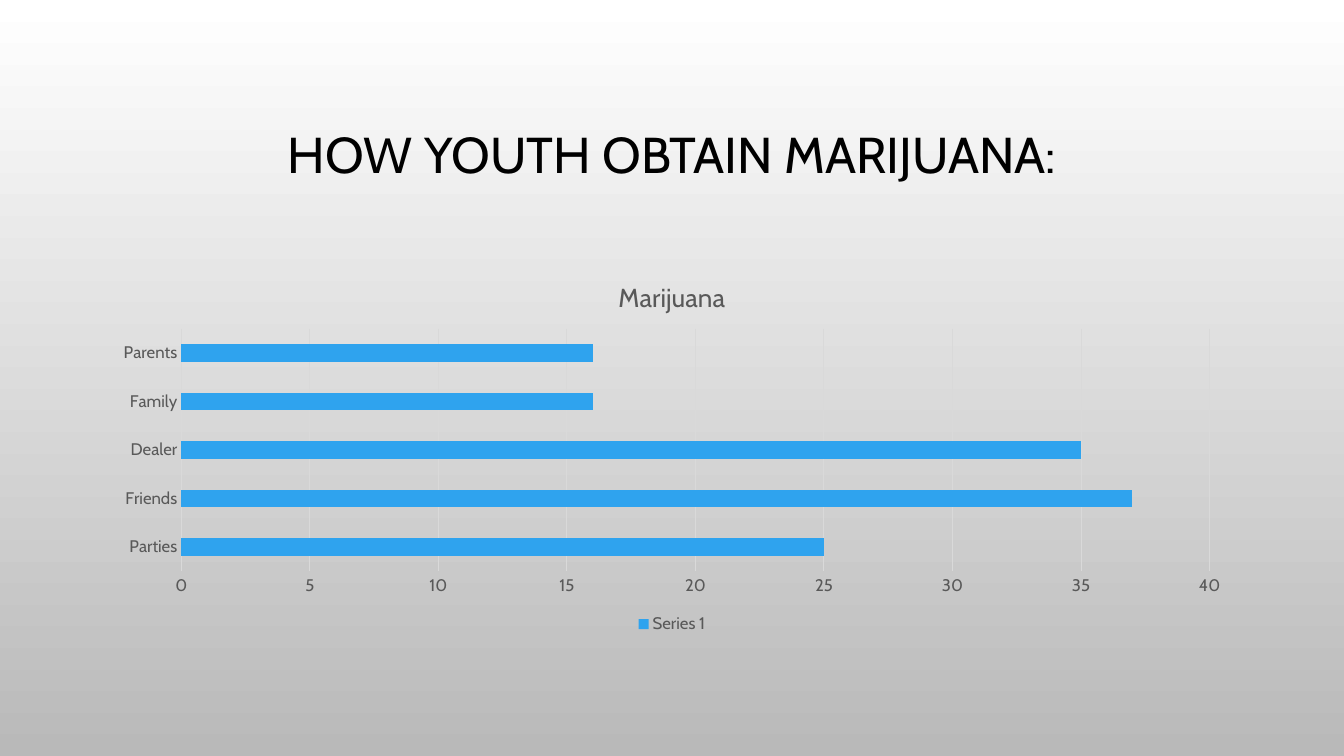
from pptx import Presentation
from pptx.chart.data import CategoryChartData
from pptx.dml.color import RGBColor
from pptx.enum import chart as kinds, text
from pptx.util import Pt

TITLE = "HOW YOUTH OBTAIN MARIJUANA:"
HEAD = "Marijuana"
SERIES = "Series 1"
SHARES = {"Parties": 25, "Friends": 37, "Dealer": 35, "Family": 16, "Parents": 16}
FONT = "Cabin"
COLORS = {"top": "FFFFFF", "base": "B9B9B9", "ink": "000000",
          "label": "595959", "grid": "D9D9D9", "bar": "2FA3EE"}
WIDE, HIGH = 960, 540
LEFT = 72
SPAN = WIDE - 2 * LEFT


def tint(name):
    return RGBColor.from_string(COLORS[name])


def style(font, size, color):
    font.name = FONT
    font.size = Pt(size)
    font.bold = False
    font.color.rgb = tint(color)


def write(frame, words, size, color, align=text.PP_ALIGN.CENTER, lines=None):
    par = frame.paragraphs[0]
    par.alignment = align
    par.line_spacing = lines
    run = par.add_run()
    run.text = words
    style(run.font, size, color)


def rule(line, color):
    line.color.rgb = tint(color)
    line.width = Pt(0.75)


def add_title(slide):
    box = slide.shapes.add_textbox(Pt(LEFT), Pt(49), Pt(SPAN), Pt(126))
    frame = box.text_frame
    frame.word_wrap = True
    frame.vertical_anchor = text.MSO_ANCHOR.MIDDLE
    write(frame, TITLE, 36, "ink", lines=0.9)


def add_bars(slide):
    data = CategoryChartData()
    data.categories = list(SHARES)
    data.add_series(SERIES, list(SHARES.values()))
    chart = slide.shapes.add_chart(
        kinds.XL_CHART_TYPE.BAR_CLUSTERED,
        Pt(LEFT), Pt(186.5), Pt(SPAN), Pt(269.3), data).chart
    style(chart.font, 10, "ink")

    chart.has_title = True
    write(chart.chart_title.text_frame, HEAD, 18.6, "label")
    chart.chart_title.include_in_layout = False

    chart.has_legend = True
    chart.legend.position = kinds.XL_LEGEND_POSITION.BOTTOM
    chart.legend.include_in_layout = False
    style(chart.legend.font, 12, "label")

    for axis in (chart.category_axis, chart.value_axis):
        axis.major_tick_mark = kinds.XL_TICK_MARK.NONE
        axis.minor_tick_mark = kinds.XL_TICK_MARK.NONE
        style(axis.tick_labels.font, 12, "label")
    chart.category_axis.has_major_gridlines = False
    rule(chart.category_axis.format.line, "grid")
    chart.value_axis.format.line.fill.background()
    chart.value_axis.has_major_gridlines = True
    rule(chart.value_axis.major_gridlines.format.line, "grid")

    plot = chart.plots[0]
    plot.gap_width = 182
    plot.vary_by_categories = False
    fill = plot.series[0].format.fill
    fill.solid()
    fill.fore_color.rgb = tint("bar")


def main():
    deck = Presentation()
    deck.slide_width, deck.slide_height = Pt(WIDE), Pt(HIGH)
    slide = deck.slides.add_slide(deck.slide_layouts[6])
    fill = slide.background.fill
    fill.gradient()
    fill.gradient_angle = 270
    for stop, name in zip(fill.gradient_stops, ("top", "base")):
        stop.color.rgb = tint(name)
    add_title(slide)
    add_bars(slide)
    deck.save("out.pptx")


if __name__ == "__main__":
    main()
